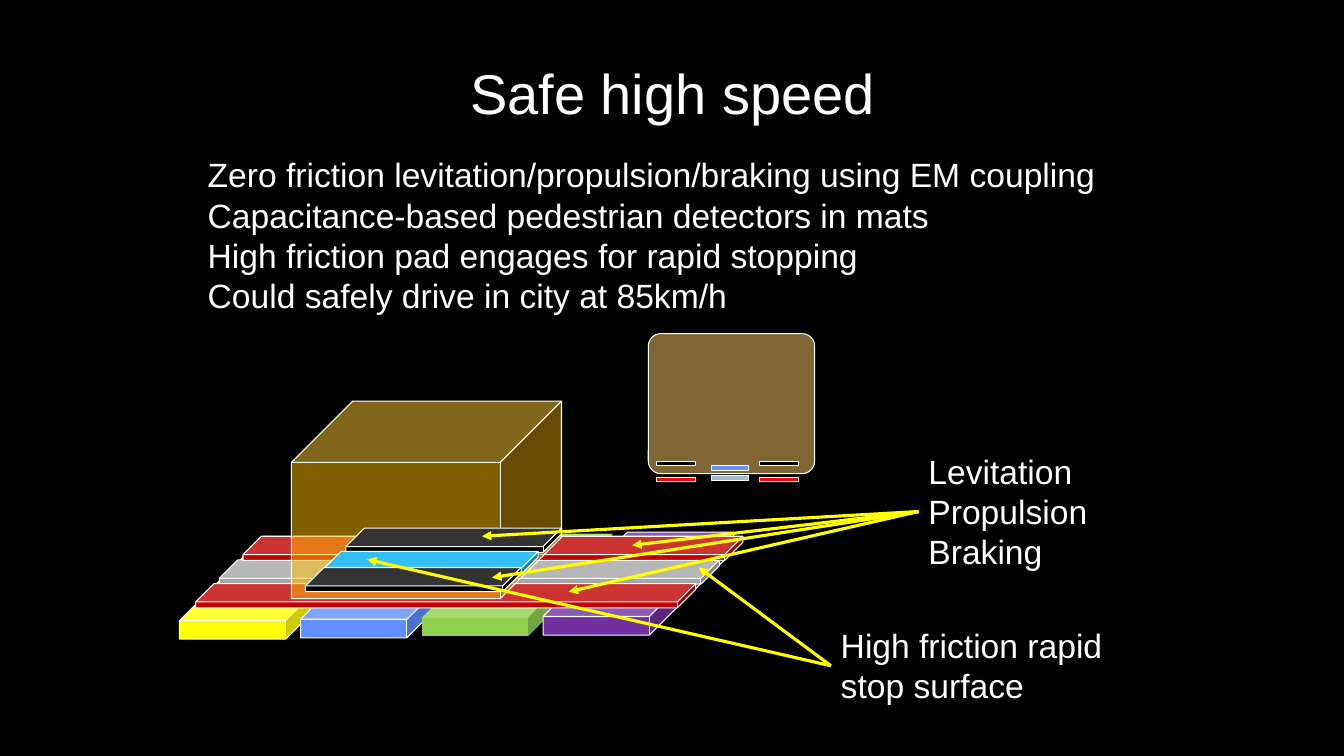
from lxml import etree
from pptx import Presentation
from pptx.dml.color import RGBColor
from pptx.enum.shapes import MSO_CONNECTOR, MSO_SHAPE
from pptx.enum.text import MSO_ANCHOR, MSO_AUTO_SIZE, PP_ALIGN
from pptx.oxml.ns import qn
from pptx.util import Inches, Pt

WIDE, HIGH = Inches(13.33), Inches(7.5)
FONT = "Arial"
CUBE, ROUND, RECT = MSO_SHAPE.CUBE, MSO_SHAPE.ROUNDED_RECTANGLE, MSO_SHAPE.RECTANGLE
LINE = MSO_CONNECTOR.STRAIGHT
LEFT, CENTER = PP_ALIGN.LEFT, PP_ALIGN.CENTER
TOP, MIDDLE = MSO_ANCHOR.TOP, MSO_ANCHOR.MIDDLE
FIXED = MSO_AUTO_SIZE.NONE

BLACK = RGBColor(0x00, 0x00, 0x00)
WHITE = RGBColor(0xFF, 0xFF, 0xFF)
YELLOW = RGBColor(0xFF, 0xFF, 0x00)
BLUE = RGBColor(0x61, 0x8F, 0xFD)
GREEN = RGBColor(0x92, 0xD0, 0x50)
PURPLE = RGBColor(0x70, 0x30, 0xA0)
GREY = RGBColor(0xA6, 0xA6, 0xA6)
CRIMSON = RGBColor(0xC0, 0x00, 0x00)
AMBER = RGBColor(0xFF, 0xC0, 0x00)
SKY = RGBColor(0x00, 0xB0, 0xF0)
SAND = RGBColor(0xFF, 0xCC, 0x66)
RED = RGBColor(0xFF, 0x00, 0x00)
STEEL = RGBColor(0xA1, 0xB8, 0xD1)


def across(share):
    return round(WIDE * share / 100)


def down(share):
    return round(HIGH * share / 100)


def frame(box):
    x, y, w, h = box
    return across(x), down(y), across(w), down(h)


def write(shape, lines, size, align=LEFT, anchor=TOP, wrap=True):
    text = shape.text_frame
    text.text = "\n".join(lines)
    text.word_wrap = wrap
    text.auto_size = FIXED
    text.vertical_anchor = anchor
    for para in text.paragraphs:
        para.alignment = align
        para.space_before = Pt(0)
        for run in para.runs:
            run.font.size = Pt(size)
            run.font.name = FONT
            run.font.color.rgb = WHITE


def draw(slide, kind, box, color, bend=None, alpha=None, edge=True):
    shape = slide.shapes.add_shape(kind, *frame(box))
    shape.shadow.inherit = False
    shape.fill.solid()
    shape.fill.fore_color.rgb = color
    if bend is not None:
        shape.adjustments[0] = bend
    if alpha:
        tint = shape.fill._xPr.find(".//" + qn("a:srgbClr"))
        etree.SubElement(tint, qn("a:alpha")).set("val", str(alpha * 1000))
    if edge:
        shape.line.color.rgb = WHITE
        shape.line.width = Pt(0.75)
    else:
        shape.line.fill.background()


def arrow(slide, start, tip):
    link = slide.shapes.add_connector(
        LINE, across(start[0]), down(start[1]), across(tip[0]), down(tip[1]))
    link.line.color.rgb = YELLOW
    link.line.width = Pt(2.25)
    etree.SubElement(link.line._get_or_add_ln(), qn("a:tailEnd")).set("type", "triangle")
    etree.SubElement(link._element.spPr, qn("a:effectLst"))


def title(slide, box, words):
    head = slide.shapes.title
    head.left, head.top, head.width, head.height = frame(box)
    write(head, [words], 40, CENTER, MIDDLE)


def points(slide, box, lines):
    body = slide.placeholders[1]
    body.left, body.top, body.width, body.height = frame(box)
    write(body, lines, 24)
    for para in body.text_frame.paragraphs:
        props = para._p.get_or_add_pPr()
        props.set("marL", "0")
        props.set("indent", "0")
        etree.SubElement(props, qn("a:buNone"))


def track(slide, box):
    x, y, w, h = box
    for i, color in enumerate((YELLOW, BLUE, GREEN, PURPLE)):
        mat = (x + 9.02 * i, y + 17.87 - 0.18 * i, 14.18, 13.6)
        draw(slide, CUBE, mat, color, 0.82, edge=color != GREEN)
    for row, color in ((1, GREY), (2, CRIMSON), (0, CRIMSON)):
        rail = (x + 4.73 - 1.76 * row, y + 17.87 + 3.13 * row, 37.2, 3.2)
        draw(slide, CUBE, rail, color, 0.76)
    draw(slide, CUBE, (x + 8.33, y, 20.1, 26.13), AMBER, 0.31, alpha=50)
    for dx, dy, color in ((12.38, 16.8, BLACK), (10.65, 19.87, SKY), (9.38, 22, BLACK)):
        draw(slide, CUBE, (x + dx, y + dy, 16.05, 3.2), color, 0.76)


def front(slide, box):
    x, y, w, h = box
    draw(slide, ROUND, box, SAND, 0.09, alpha=50)
    for dy, color in ((17.47, BLUE), (18.8, STEEL)):
        draw(slide, RECT, (x + 4.73, y + dy, 2.7, 0.67), color)
    for dx in (0.6, 8.25):
        for dy, color in ((16.93, BLACK), (19.07, RED)):
            draw(slide, RECT, (x + dx, y + dy, 2.93, 0.53), color)


def callout(slide, box, lines, tips, wrap):
    x, y, w, h = box
    write(slide.shapes.add_textbox(*frame(box)), lines, 24, wrap=wrap)
    for dx, dy in tips:
        arrow(slide, (x, y + h / 2), (x + dx, y + dy))


def main():
    deck = Presentation()
    deck.slide_width, deck.slide_height = WIDE, HIGH
    slide = deck.slides.add_slide(deck.slide_layouts[1])
    slide.background.fill.solid()
    slide.background.fill.fore_color.rgb = BLACK
    title(slide, (18.15, 3.87, 63.77, 16.67), "Safe high speed")
    points(slide, (14.7, 19.73, 68.27, 22.93), [
        "Zero friction levitation/propulsion/braking using EM coupling",
        "Capacitance-based pedestrian detectors in mats",
        "High friction pad engages for rapid stopping",
        "Could safely drive in city at 85km/h"])
    track(slide, (13.35, 53.07, 41.93, 31.47))
    callout(slide, (68.34, 58.93, 13.5, 17.47), ["Levitation", "Propulsion", "Braking"],
            ((-21.3, 13.2), (-26.03, 19.34), (-32.48, 12), (-31.73, 17.47)), False)
    callout(slide, (61.82, 82, 21.23, 12.13), ["High friction rapid stop surface"],
            ((-9.83, -6.93), (-34.51, -8)), True)
    front(slide, (48.24, 44.13, 12.38, 18.53))
    deck.save("out.pptx")


if __name__ == "__main__":
    main()
